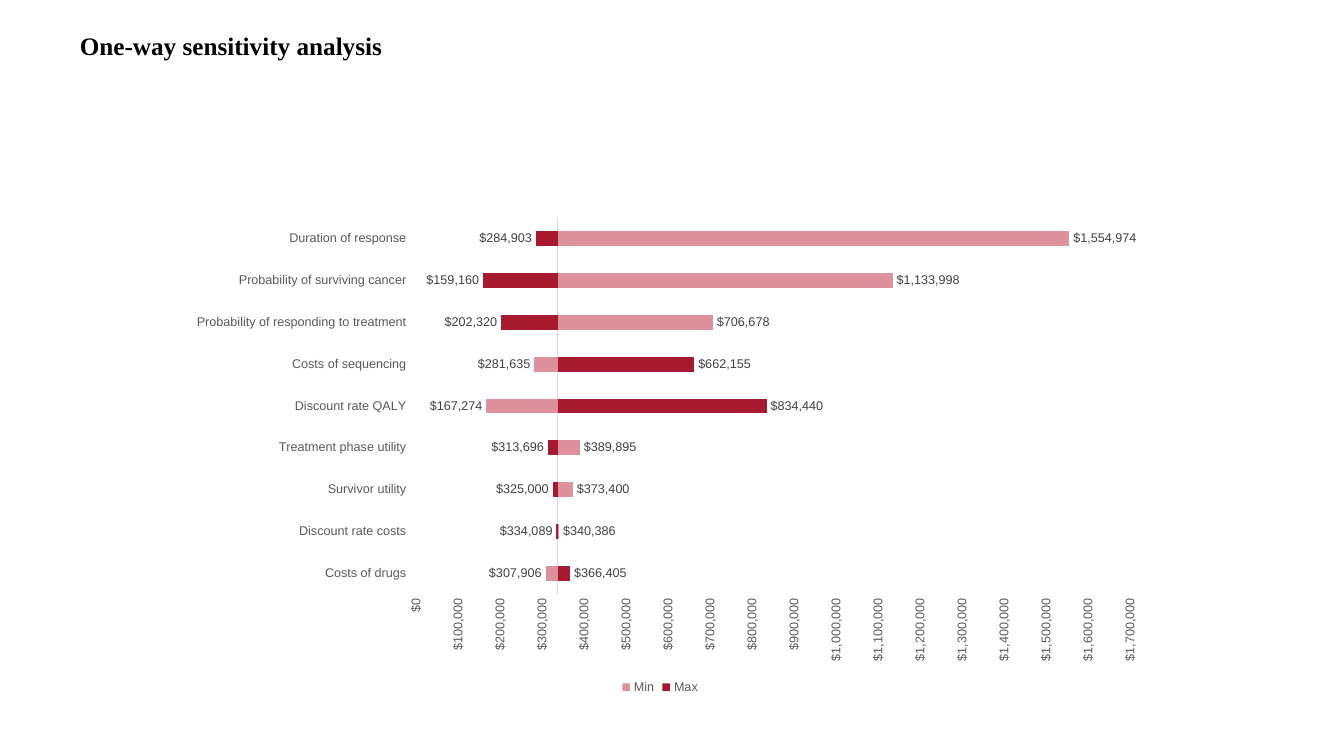
import pptx
import pptx.chart.data
import pptx.dml.color
import pptx.enum.chart
import pptx.util
from pptx.oxml.ns import qn

Pt = pptx.util.Pt
COLORS = {
    "title": "000000",
    "axis_text": "595959",
    "label": "404040",
    "axis_line": "D9D9D9",
    "Max": "A6192E",
    "Min": "DE919C",
}
DOLLARS = '"$"#,##0'
BASE_CASE = 337000

# Parameter, result at its maximum, result at its minimum (bottom to top)
RESULTS = [
    ("Costs of drugs", 366405, 307906),
    ("Discount rate costs", 334089, 340386),
    ("Survivor utility", 325000, 373400),
    ("Treatment phase utility", 313696, 389895),
    ("Discount rate QALY", 834440, 167274),
    ("Costs of sequencing", 662155, 281635),
    ("Probability of responding to treatment", 202320, 706678),
    ("Probability of surviving cancer", 159160, 1133998),
    ("Duration of response", 284903, 1554974),
]


class SlideBuilder:
    def __init__(self, page):
        self.page = page

    def color(self, name):
        return pptx.dml.color.RGBColor.from_string(COLORS[name])

    def style(self, font, size, color, face="Arial", bold=False):
        font.name = face
        font.size = Pt(size)
        font.bold = bold
        font.color.rgb = self.color(color)

    def title(self, text, left, top, width, height):
        box = self.page.shapes.add_textbox(Pt(left), Pt(top), Pt(width), Pt(height))
        frame = box.text_frame
        frame.word_wrap = True
        frame.margin_left = frame.margin_right = 0
        frame.margin_top = frame.margin_bottom = 0
        span = frame.paragraphs[0].add_run()
        span.text = text
        self.style(span.font, 18, "title", "Times New Roman", True)

    def tornado(self, results, left, top, width, height):
        names, maxima, minima = zip(*results)
        data = pptx.chart.data.CategoryChartData(number_format=DOLLARS)
        data.categories = names
        data.add_series("Max", maxima)
        data.add_series("Min", minima)
        chart = self.page.shapes.add_chart(
            pptx.enum.chart.XL_CHART_TYPE.BAR_CLUSTERED,
            Pt(left), Pt(top), Pt(width), Pt(height), data).chart
        self.style(chart.font, 10, "title")
        chart.has_title = False
        chart.has_legend = True
        chart.legend.position = pptx.enum.chart.XL_LEGEND_POSITION.BOTTOM
        chart.legend.include_in_layout = False
        self.style(chart.legend.font, 9, "axis_text")
        self.bars(chart.plots[0])
        self.axes(chart.category_axis, chart.value_axis)
        self.plot_area(chart, x=0.252, y=0.107, w=0.726, h=0.699)

    def bars(self, plot):
        plot.gap_width = 182
        plot.overlap = 100
        plot.vary_by_categories = False
        for series in plot.series:
            series.invert_if_negative = False
            series.format.fill.solid()
            series.format.fill.fore_color.rgb = self.color(series.name)
            labels = series.data_labels
            labels.show_value = True
            labels.number_format = DOLLARS
            labels.number_format_is_linked = False
            labels.position = pptx.enum.chart.XL_LABEL_POSITION.OUTSIDE_END
            self.style(labels.font, 9, "label")

    def axes(self, category, value):
        for axis in (category, value):
            axis.has_major_gridlines = False
            axis.major_tick_mark = pptx.enum.chart.XL_TICK_MARK.NONE
            axis.minor_tick_mark = pptx.enum.chart.XL_TICK_MARK.NONE
            self.style(axis.tick_labels.font, 9, "axis_text")
        category.tick_label_position = pptx.enum.chart.XL_TICK_LABEL_POSITION.LOW
        category.format.line.color.rgb = self.color("axis_line")
        category.format.line.width = Pt(0.75)
        value.format.line.fill.background()
        value.minimum_scale = 0
        value.maximum_scale = 1700000
        value.major_unit = 100000
        value.crosses_at = BASE_CASE
        value.tick_labels.number_format = DOLLARS
        value.tick_labels.number_format_is_linked = False
        # Turn the dollar labels upright
        body = value._element.find(qn("c:txPr")).find(qn("a:bodyPr"))
        body.set("rot", "-5400000")
        body.set("vert", "horz")

    def plot_area(self, chart, **fractions):
        area = chart._chartSpace.find(qn("c:chart")).find(qn("c:plotArea"))
        layout = area.find(qn("c:layout"))
        if layout is None:
            layout = area.makeelement(qn("c:layout"), {})
            area.insert(0, layout)
        manual = layout.makeelement(qn("c:manualLayout"), {})
        layout.append(manual)
        settings = {"layoutTarget": "inner", "xMode": "edge", "yMode": "edge", **fractions}
        for tag, setting in settings.items():
            manual.append(manual.makeelement(qn("c:" + tag), {"val": str(setting)}))


def main():
    deck = pptx.Presentation()
    deck.slide_width = Pt(960)
    deck.slide_height = Pt(540)
    builder = SlideBuilder(deck.slides.add_slide(deck.slide_layouts[6]))

    # Heading
    builder.title("One-way sensitivity analysis", 57, 21.6, 666, 51)

    # Tornado chart around the base case
    builder.tornado(RESULTS, 120.2, 114.5, 702.7, 384.5)

    deck.save("out.pptx")


if __name__ == "__main__":
    main()
